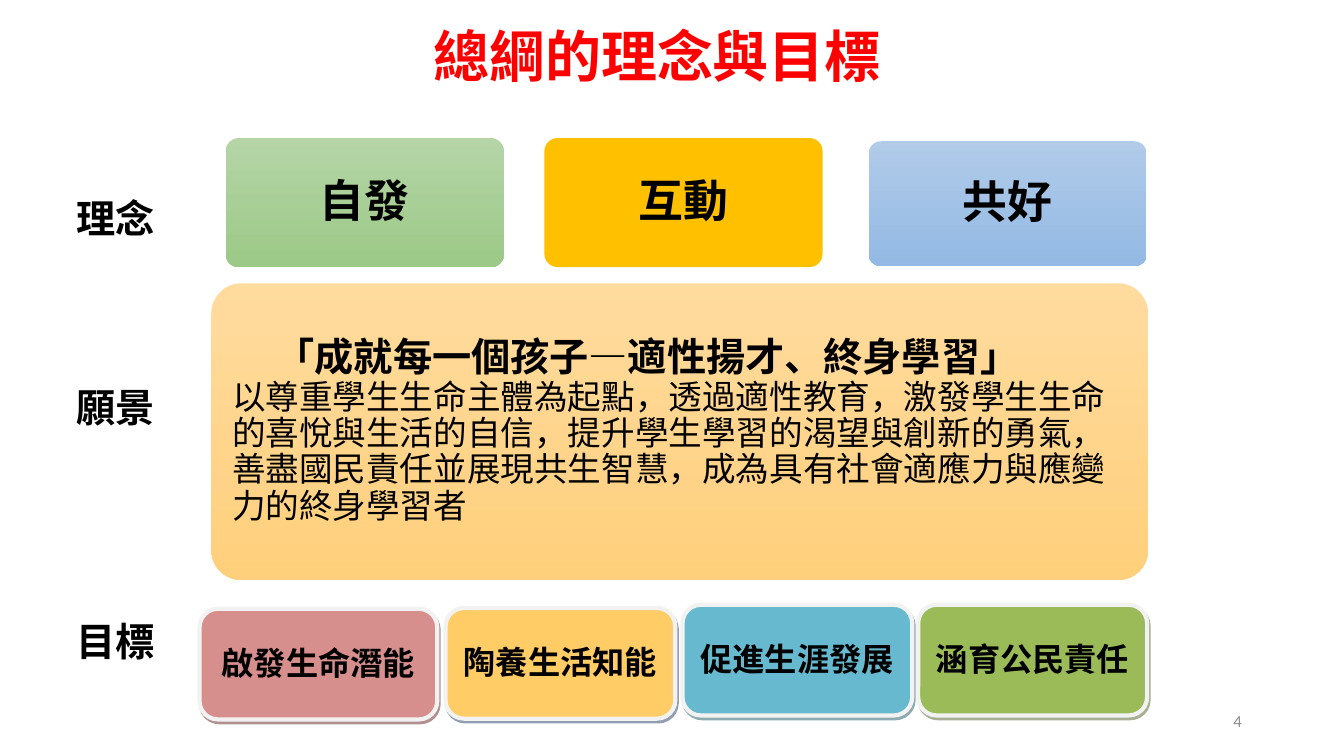
from dataclasses import dataclass
from typing import Optional

from lxml.etree import SubElement
from pptx import Presentation
from pptx.dml.color import RGBColor
from pptx.enum.shapes import MSO_SHAPE
from pptx.enum.text import MSO_ANCHOR, PP_ALIGN
from pptx.oxml.ns import qn
from pptx.util import Cm, Pt


@dataclass(frozen=True)
class Theme:
    cjk: str = "Noto Sans CJK SC"
    latin: str = "Calibri"
    ink: str = "000000"
    title_red: str = "FF0000"
    number_gray: str = "8C8C8C"
    goal_border: str = "F2F2F2"
    title_size: float = 40
    idea_size: float = 32
    heading_size: float = 28
    body_size: float = 24
    goal_size: float = 23
    number_size: float = 12


@dataclass(frozen=True)
class Area:
    left: float
    top: float
    width: float
    height: float

    def lengths(self):
        return Cm(self.left), Cm(self.top), Cm(self.width), Cm(self.height)


@dataclass(frozen=True)
class Line:
    text: str
    size: float
    color: str = "000000"
    bold: bool = True
    align: PP_ALIGN = PP_ALIGN.CENTER
    spacing: float = 0.9
    font: str = "Noto Sans CJK SC"
    indent: float = 0


@dataclass(frozen=True)
class Card:
    area: Area
    lines: tuple[Line, ...]
    fill: str
    fill_end: Optional[str] = None
    shadow: Optional[str] = None
    corner: float = 0.1
    inset: float = 0.3


THEME = Theme()
LABEL_LEFT, LABEL_WIDTH, LABEL_HEIGHT = 1.68, 2.9, 1.4
LABELS = (("理念", 5.49), ("願景", 10.24), ("目標", 16.15))


def idea(text: str, left: float, top: float, height: float,
         fill: str, fill_end: Optional[str] = None) -> Card:
    return Card(Area(left, top, 7.01, height), (Line(text, THEME.idea_size),), fill, fill_end)


def goal(text: str, left: float, top: float, width: float, fill: str, shadow: str) -> Card:
    return Card(Area(left, top, width, 2.79), (Line(text, THEME.goal_size, spacing=0.96),),
                fill, shadow=shadow, corner=0.167, inset=0.25)


VISION = Card(
    Area(5.33, 7.14, 23.6, 7.47),
    (
        Line("「成就每一個孩子—適性揚才、終身學習」", THEME.heading_size,
             align=PP_ALIGN.LEFT, indent=1.1),
        Line("以尊重學生生命主體為起點，透過適性教育，激發學生生命的喜悅與生活的自信，"
             "提升學生學習的渴望與創新的勇氣，善盡國民責任並展現共生智慧，"
             "成為具有社會適應力與應變力的終身學習者",
             THEME.body_size, bold=False, align=PP_ALIGN.LEFT),
    ),
    "FFDB9E", "FFD07C",
)
CARDS = (
    VISION,
    idea("自發", 5.69, 3.48, 3.25, "B5D5A7", "9CC987"),
    idea("互動", 13.72, 3.48, 3.25, "FFC000"),
    idea("共好", 21.89, 3.56, 3.15, "B1CBE9", "93B9E4"),
    goal("啟發生命潛能", 5.03, 15.34, 5.99, "D78F8D", "622423"),
    goal("陶養生活知能", 11.23, 15.32, 5.79, "FFCC66", "243F60"),
    goal("促進生涯發展", 17.2, 15.24, 5.79, "67B9CF", "205867"),
    goal("涵育公民責任", 23.14, 15.24, 5.77, "9BBB59", "4E6128"),
)


def rgb(color: str) -> RGBColor:
    return RGBColor.from_string(color)


def write_lines(box, lines: tuple[Line, ...], inset: float = 0.25) -> None:
    frame = box.text_frame
    frame.word_wrap = True
    frame.vertical_anchor = MSO_ANCHOR.MIDDLE
    frame.margin_left = frame.margin_right = Cm(inset)
    frame.margin_top = frame.margin_bottom = Cm(0.13)
    for index, line in enumerate(lines):
        para = frame.add_paragraph() if index else frame.paragraphs[0]
        para.text = line.text
        para.alignment = line.align
        para.line_spacing = line.spacing
        if line.indent:
            para._p.get_or_add_pPr().set("marL", str(Cm(line.indent)))
        font = para.font
        font.name, font.size, font.bold = line.font, Pt(line.size), line.bold
        font.color.rgb = rgb(line.color)
        SubElement(font._element, qn("a:ea"), typeface=line.font)


def add_text(slide, area: Area, line: Line) -> None:
    write_lines(slide.shapes.add_textbox(*area.lengths()), (line,))


def add_hard_shadow(box, color: str) -> None:
    """Cast a half-transparent, unblurred shadow to the lower right."""
    effects = box._element.spPr.find(qn("a:effectLst"))
    shadow = SubElement(effects, qn("a:outerShdw"), dist=str(Pt(2.2)),
                        dir=str(63 * 60000), algn="ctr", rotWithShape="0")
    tone = SubElement(shadow, qn("a:srgbClr"), val=color)
    SubElement(tone, qn("a:alpha"), val="50000")


def add_card(slide, card: Card) -> None:
    box = slide.shapes.add_shape(MSO_SHAPE.ROUNDED_RECTANGLE, *card.area.lengths())
    box.adjustments[0] = card.corner
    if card.fill_end:
        box.fill.gradient()
        box.fill.gradient_angle = 270
        for stop, color in zip(box.fill.gradient_stops, (card.fill, card.fill_end)):
            stop.color.rgb = rgb(color)
    else:
        box.fill.solid()
        box.fill.fore_color.rgb = rgb(card.fill)
    box.line.fill.background()
    box.shadow.inherit = False
    if card.shadow:
        box.line.color.rgb = rgb(THEME.goal_border)
        box.line.width = Pt(3)
        add_hard_shadow(box, card.shadow)
    write_lines(box, card.lines, card.inset)


def main() -> None:
    deck = Presentation()
    deck.slide_width, deck.slide_height = Cm(33.87), Cm(19.05)
    slide = deck.slides.add_slide(deck.slide_layouts[6])
    add_text(slide, Area(5.13, 0.48, 22.86, 2.01),
             Line("總綱的理念與目標", THEME.title_size, THEME.title_red))
    for card in CARDS:
        add_card(slide, card)
    for text, middle in LABELS:
        area = Area(LABEL_LEFT, middle - LABEL_HEIGHT / 2, LABEL_WIDTH, LABEL_HEIGHT)
        add_text(slide, area, Line(text, THEME.heading_size, align=PP_ALIGN.LEFT, spacing=1.0))
    add_text(slide, Area(23.93, 17.65, 7.62, 1.02),
             Line("4", THEME.number_size, THEME.number_gray, False,
                  PP_ALIGN.RIGHT, 1.0, THEME.latin))
    deck.save("out.pptx")


if __name__ == "__main__":
    main()
